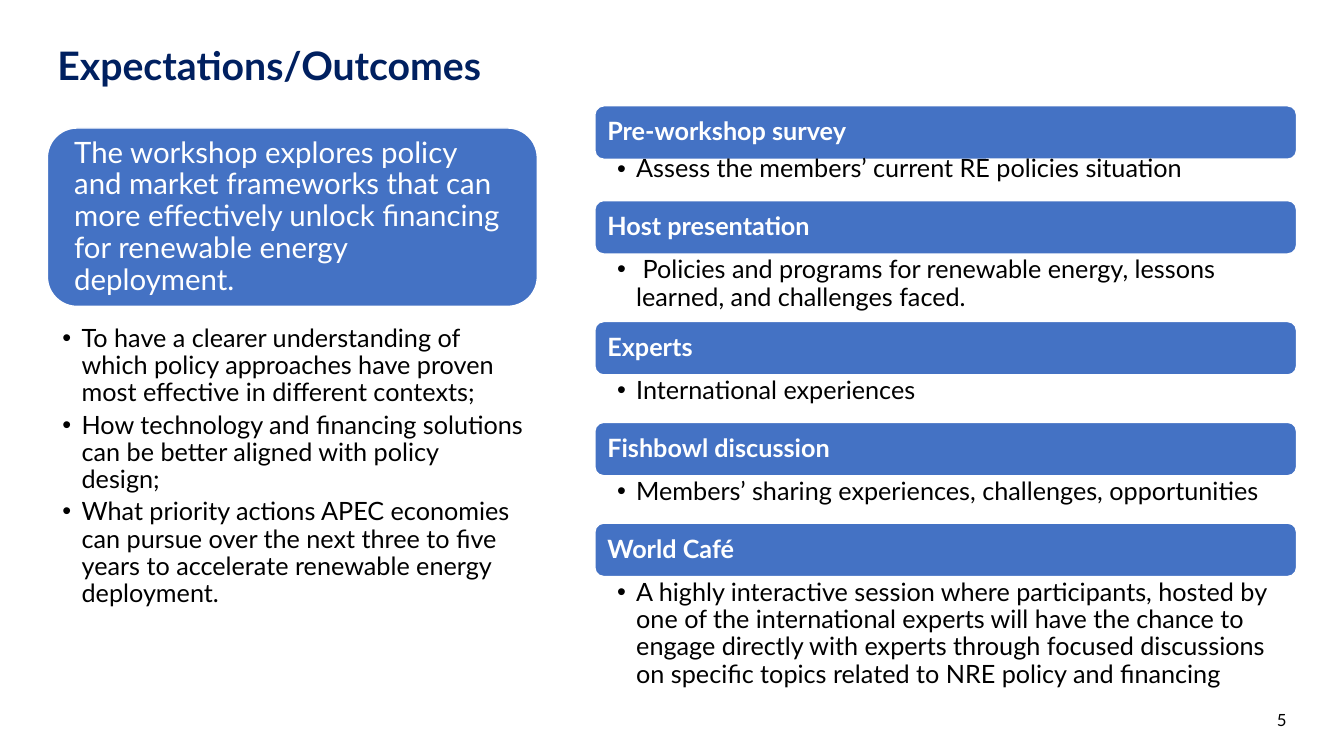
from lxml import etree
from pptx import Presentation
from pptx.dml.color import RGBColor
from pptx.enum import shapes, text
from pptx.oxml import ns
from pptx.util import Inches, Pt

TITLE = "Expectations/Outcomes"
PAGE_NUMBER = "5"
SUMMARY = ("The workshop explores policy and market frameworks that can more "
           "effectively unlock financing for renewable energy deployment.")
GOALS = [
    "To have a clearer understanding of which policy approaches have proven "
    "most effective in different contexts;",
    "How technology and financing solutions can be better aligned with policy design;",
    "What priority actions APEC economies can pursue over the next three to five "
    "years to accelerate renewable energy deployment.",
]
# Heading, detail, detail height, overlap of the detail with its heading
SESSIONS = [
    ("Pre-workshop survey", "Assess the members’ current RE policies situation", 0.47, 0.06),
    ("Host presentation",
     " Policies and programs for renewable energy, lessons learned, and challenges faced.",
     0.67, 0),
    ("Experts", "International experiences", 0.47, 0),
    ("Fishbowl discussion", "Members’ sharing experiences, challenges, opportunities", 0.47, 0),
    ("World Café",
     "A highly interactive session where participants, hosted by one of the "
     "international experts will have the chance to engage directly with experts "
     "through focused discussions on specific topics related to NRE policy and financing",
     1.27, 0),
]

FONT = "Lato"
NAVY = RGBColor(0x00, 0x20, 0x60)
BLUE = RGBColor(0x44, 0x72, 0xC4)
WHITE = RGBColor(0xFF, 0xFF, 0xFF)
BLACK = RGBColor(0x00, 0x00, 0x00)

LEFT, LEFT_WIDTH = 0.47, 4.86
RIGHT, RIGHT_WIDTH = 5.9, 6.96
SESSIONS_TOP, HEADING_HEIGHT = 1.05, 0.53
BULLET_INDENT = 0.19


def add_bullet(paragraph):
    properties = paragraph._p.get_or_add_pPr()
    properties.set("marL", str(Inches(BULLET_INDENT)))
    properties.set("indent", str(-Inches(BULLET_INDENT)))
    etree.SubElement(properties, ns.qn("a:buFont"), typeface="Arial")
    etree.SubElement(properties, ns.qn("a:buChar"), char="•")


def write(shape, lines, size, color, insets, anchor=text.MSO_ANCHOR.MIDDLE,
          bold=False, bullets=False, align=text.PP_ALIGN.LEFT):
    """Fill a shape with paragraphs; insets are left, top, right, bottom."""
    frame = shape.text_frame
    frame.word_wrap = True
    frame.vertical_anchor = anchor
    (frame.margin_left, frame.margin_top,
     frame.margin_right, frame.margin_bottom) = map(Inches, insets)
    frame.text = "\n".join(lines)
    for paragraph in frame.paragraphs:
        paragraph.alignment = align
        paragraph.line_spacing = 0.9
        if bullets:
            paragraph.space_after = Pt(3.6)
            add_bullet(paragraph)
        for run in paragraph.runs:
            run.font.name = FONT
            run.font.size = Pt(size)
            run.font.bold = bold
            run.font.color.rgb = color


def add_text(slide, box, *content, **style):
    write(slide.shapes.add_textbox(*map(Inches, box)), *content, **style)


def add_card(slide, box, *content, **style):
    card = slide.shapes.add_shape(shapes.MSO_SHAPE.ROUNDED_RECTANGLE, *map(Inches, box))
    card.shadow.inherit = False
    card.fill.solid()
    card.fill.fore_color.rgb = BLUE
    card.line.color.rgb = WHITE
    card.line.width = Pt(1)
    write(card, *content, **style)


def add_bullets(slide, box, lines, left_inset):
    add_text(slide, box, lines, 18, BLACK, (left_inset, 0.03, 0.14, 0.03),
             anchor=text.MSO_ANCHOR.TOP, bullets=True)


def main():
    presentation = Presentation()
    presentation.slide_width, presentation.slide_height = Inches(13.33), Inches(7.5)
    slide = presentation.slides.add_slide(presentation.slide_layouts[6])
    plain = (0.1, 0.05, 0.1, 0.05)

    add_text(slide, (LEFT, 0.34, 12.39, 0.59), [TITLE], 28, NAVY, plain,
             anchor=text.MSO_ANCHOR.BOTTOM, bold=True)
    add_text(slide, (9.86, 6.95, 3, 0.4), [PAGE_NUMBER], 12, BLACK, plain,
             align=text.PP_ALIGN.RIGHT)

    add_card(slide, (LEFT, 1.27, LEFT_WIDTH, 1.77), [SUMMARY], 21, WHITE, (0.18,) * 4)
    add_bullets(slide, (LEFT, 3.2, LEFT_WIDTH, 3.52), GOALS, 0.15)

    top = SESSIONS_TOP
    for heading, detail, height, overlap in SESSIONS:
        add_card(slide, (RIGHT, top, RIGHT_WIDTH, HEADING_HEIGHT), [heading], 18, WHITE,
                 (0.1,) * 4, bold=True)
        top += HEADING_HEIGHT - overlap
        add_bullets(slide, (RIGHT, top, RIGHT_WIDTH, height), [detail], 0.22)
        top += height

    presentation.save("out.pptx")


if __name__ == "__main__":
    main()
